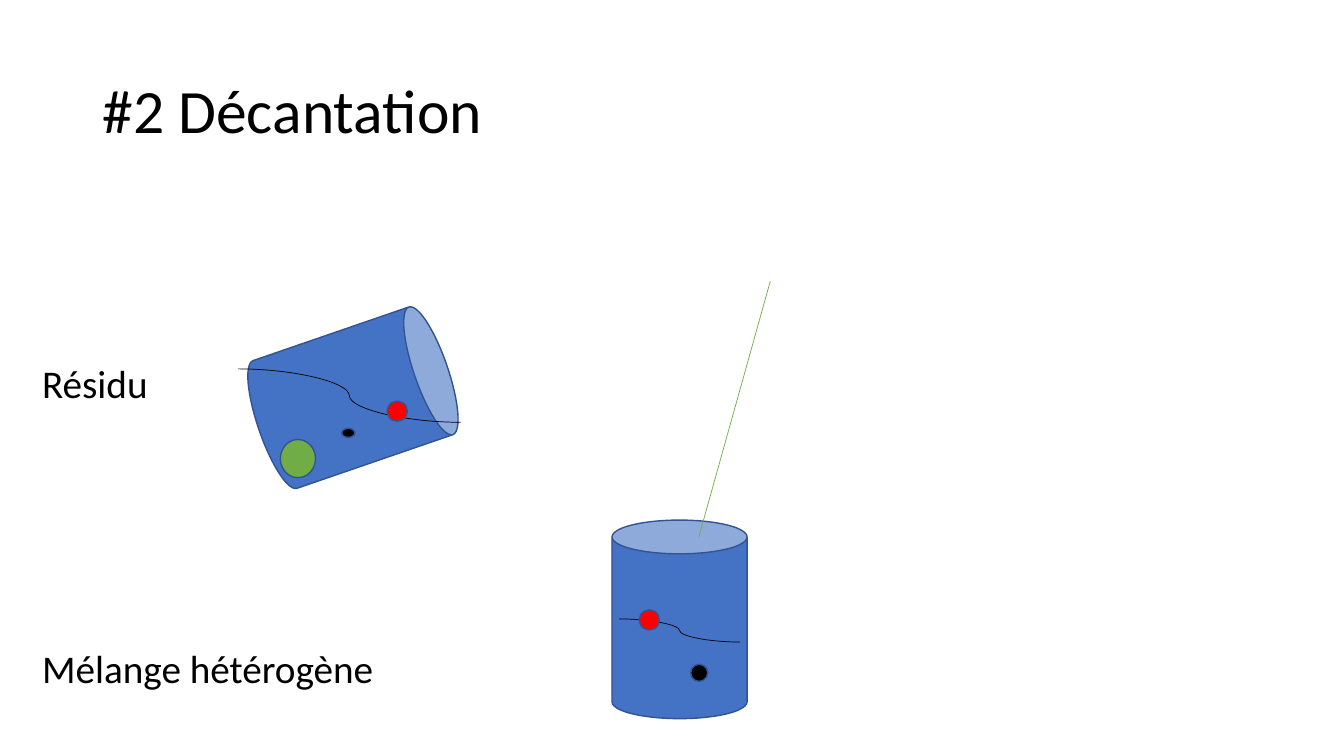
import pptx
import pptx.dml.color
import pptx.enum.shapes
import pptx.enum.text
import pptx.oxml.ns
import pptx.util
from dataclasses import dataclass
from lxml import etree

Inches = pptx.util.Inches
Pt = pptx.util.Pt
KIND = pptx.enum.shapes.MSO_SHAPE
LINK = pptx.enum.shapes.MSO_CONNECTOR
ANCHOR = pptx.enum.text.MSO_ANCHOR

HUES = {"black": "000000", "blue": "4472C4", "edge": "325491",
        "green": "70AD47", "red": "FF0000"}
FONT = "Calibri"


@dataclass
class Solid:
    kind: KIND
    left: float
    top: float
    width: float
    height: float
    hue: str
    turn: float = 0


@dataclass
class Stroke:
    kind: LINK
    start: tuple[float, float]
    end: tuple[float, float]
    hue: str


@dataclass
class Line:
    text: str
    size: float
    gap: float = 0


def color(name: str) -> pptx.dml.color.RGBColor:
    return pptx.dml.color.RGBColor.from_string(HUES[name])


def add_solid(slide, item: Solid) -> None:
    shape = slide.shapes.add_shape(
        item.kind, Inches(item.left), Inches(item.top),
        Inches(item.width), Inches(item.height))
    shape.rotation = item.turn
    shape.shadow.inherit = False
    shape.fill.solid()
    shape.fill.fore_color.rgb = color(item.hue)
    shape.line.color.rgb = color("edge")
    shape.line.width = Pt(1)


def add_stroke(slide, item: Stroke) -> None:
    link = slide.shapes.add_connector(
        item.kind, *map(Inches, item.start + item.end))
    link.line.color.rgb = color(item.hue)
    link.line.width = Pt(0.5)
    etree.SubElement(link._element.spPr, pptx.oxml.ns.qn("a:effectLst"))


def add_text(slide, box: tuple[float, float, float, float],
             lines: list[Line], anchor: ANCHOR) -> None:
    frame = slide.shapes.add_textbox(*map(Inches, box)).text_frame
    frame.word_wrap = True
    frame.vertical_anchor = anchor
    for i, line in enumerate(lines):
        para = frame.add_paragraph() if i else frame.paragraphs[0]
        para.line_spacing = 0.9
        para.space_before = Pt(line.gap)
        run = para.add_run()
        run.text = line.text
        run.font.name = FONT
        run.font.size = Pt(line.size)
        run.font.color.rgb = color("black")


def main() -> None:
    deck = pptx.Presentation()
    deck.slide_width, deck.slide_height = Inches(13.33), Inches(7.5)
    slide = deck.slides.add_slide(deck.slide_layouts[6])

    # Title and labels
    add_text(slide, (0.92, 0.4, 11.5, 1.45),
             [Line("#2 Décantation", 44)], ANCHOR.MIDDLE)
    add_text(slide, (0.32, 3.57, 7.43, 3.85),
             [Line("Résidu", 28), Line("Mélange hétérogène", 28, 173)],
             ANCHOR.TOP)

    # Beakers, liquid levels, grains and stirring rod, back to front
    parts = [
        Solid(KIND.CAN, 2.83, 2.96, 1.34, 1.97, "blue", 71),
        Stroke(LINK.CURVE, (2.36, 3.66), (4.57, 4.19), "black"),
        Solid(KIND.OVAL, 2.78, 4.36, 0.35, 0.38, "green"),
        Solid(KIND.OVAL, 3.39, 4.25, 0.13, 0.09, "black"),
        Solid(KIND.OVAL, 3.84, 3.98, 0.2, 0.2, "red"),
        Solid(KIND.CAN, 6.07, 5.16, 1.34, 1.97, "blue"),
        Stroke(LINK.STRAIGHT, (7.64, 2.79), (6.93, 5.33), "green"),
        Stroke(LINK.CURVE, (6.14, 6.14), (7.34, 6.37), "black"),
        Solid(KIND.OVAL, 6.34, 6.05, 0.2, 0.2, "red"),
        Solid(KIND.OVAL, 6.85, 6.59, 0.17, 0.17, "black"),
    ]
    for part in parts:
        if isinstance(part, Solid):
            add_solid(slide, part)
        else:
            add_stroke(slide, part)

    deck.save("out.pptx")


if __name__ == "__main__":
    main()
